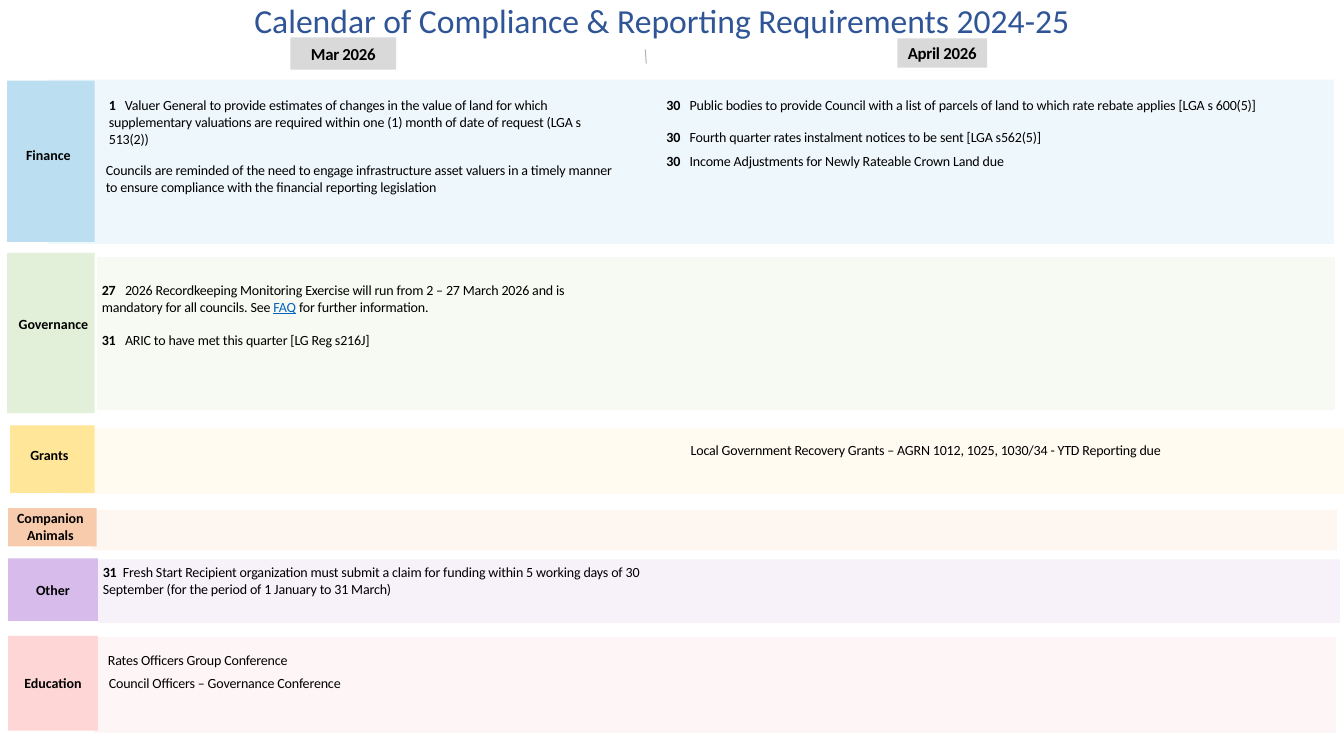
from pptx import Presentation
from pptx.dml.color import RGBColor
from pptx.enum.shapes import MSO_CONNECTOR, MSO_SHAPE
from pptx.enum.text import MSO_ANCHOR, PP_ALIGN
from pptx.oxml.ns import qn
from pptx.util import Inches, Pt
from lxml import etree

LEFT, MID = PP_ALIGN.LEFT, PP_ALIGN.CENTER
CENTRE = MSO_ANCHOR.MIDDLE
RECT = MSO_SHAPE.RECTANGLE
LINE = MSO_CONNECTOR.STRAIGHT

BASE = {"name": "Calibri", "size": Pt(10), "bold": False}
STYLES = {
    "title": {"size": Pt(24), "hex": "2F5597"},
    "month": {"size": Pt(12), "bold": True, "spc": -20},
    "label": {"bold": True},
    "day": {"bold": True, "spc": -10},
    "note": {"spc": -10},
    "link": {"underline": True, "hex": "0563C1", "spc": -10},
}
GREY = "D9D9D9"
TITLE = "Calendar of Compliance & Reporting Requirements 2024-25"
MONTHS = [("Mar 2026", (2.88, 0.37, 1.05, 0.32)),
          ("April 2026", (8.9, 0.38, 0.89, 0.29))]


def dated(day, *parts):
    """Paragraph with a bold day, a tab, then note text or (text, style) parts."""
    runs = [p if isinstance(p, tuple) else (p, "note") for p in parts]
    return [(day + "\t", "day")] + runs


def plain(text):
    return [(text, "note")]


# Labels and notes are offset from the corner of the tag.
# A note is (box, tab stop, paragraphs).
ROWS = [
    {"name": "Finance", "tag": (0.07, 0.8, 0.87, 1.6), "hue": "BBDEF0",
     "band": (0.48, 0.79, 12.75, 1.63), "tint": "ADD8ED",
     "label": (-0.12, 0.64, 1.06, 0.2),
     "notes": [
         ((1.01, 0.16, 5.06, 0.5), 0.16, [dated(
             "1", "Valuer General to provide estimates of changes in the value of "
             "land for which supplementary valuations are required within one (1) "
             "month of date of request (LGA s 513(2))")]),
         ((0.98, 0.8, 5.06, 0.34), 0, [plain(
             "Councils are reminded of the need to engage infrastructure asset "
             "valuers in a timely manner to ensure compliance with the financial "
             "reporting legislation")]),
         ((6.54, 0.16, 6.19, 0.17), 0.23, [dated(
             "30", "Public bodies to provide Council with a list of parcels of land "
             "to which rate rebate applies [LGA s 600(5)]")]),
         ((6.54, 0.47, 5.7, 0.17), 0.23, [dated(
             "30", "Fourth quarter rates instalment notices to be sent "
             "[LGA s562(5)]")]),
         ((6.54, 0.71, 3.69, 0.17), 0.23, [dated(
             "30", "Income Adjustments for Newly Rateable Crown Land due")])]},
    {"name": "Governance", "tag": (0.07, 2.51, 0.87, 1.59), "hue": "E2F0D9",
     "band": (0.96, 2.55, 12.28, 1.52), "tint": "D3E8C6",
     "label": (-0.07, 0.6, 1.06, 0.2),
     "notes": [
         ((0.94, 0.28, 4.92, 0.67), 0.23, [
             dated("27", "2026 Recordkeeping Monitoring Exercise will run from "
                   "2 – 27 March 2026 and is mandatory for all councils. See ",
                   ("FAQ", "link"), " for further information."),
             dated("31", "ARIC to have met this quarter [LG Reg s216J]")])]},
    {"name": "Grants", "tag": (0.1, 4.22, 0.84, 0.67), "hue": "FFE699",
     "band": (0.59, 4.25, 12.75, 0.65), "tint": "FFECB7",
     "label": (-0.05, 0.2, 0.88, 0.18),
     "notes": [
         ((6.75, 0.16, 6.09, 0.17), 0, [plain(
             "Local Government Recovery Grants – AGRN 1012, 1025, 1030/34 - "
             "YTD Reporting due")])]},
    {"name": "Companion Animals", "tag": (0.08, 5.04, 0.88, 0.38), "hue": "F8CBAD",
     "band": (0.91, 5.06, 12.35, 0.4), "tint": "F9D5BD",
     "label": (-0.11, 0.04, 1.06, 0.28), "notes": []},
    {"name": "Other", "tag": (0.08, 5.54, 0.89, 0.62), "hue": "D6BBEB",
     "band": (0.97, 5.55, 12.32, 0.63), "tint": "D7BCEA",
     "notes": [
         ((0.94, 0.05, 5.86, 0.34), 0.2, [dated(
             "31", "Fresh Start Recipient organization must submit a claim for "
             "funding within 5 working days of 30 September (for the period of "
             "1 January to 31 March)")])]},
    {"name": "Education", "tag": (0.08, 6.31, 0.89, 0.94), "hue": "FED6D6",
     "band": (0.93, 6.32, 12.32, 0.95), "tint": "FED6D6",
     "notes": [
         ((0.99, 0.09, 2.82, 0.29), 0, [plain("Rates Officers Group Conference")]),
         ((1.0, 0.34, 3.26, 0.26), 0,
          [plain("Council Officers – Governance Conference")])]},
]


def paint(fmt, code):
    """Set a solid colour on a fill."""
    fmt.solid()
    fmt.fore_color.rgb = RGBColor.from_string(code)


def fade(shape, alpha):
    """Set the opacity of the shape's colour in percent."""
    clr = shape._element.spPr.find(".//" + qn("a:srgbClr"))
    etree.SubElement(clr, qn("a:alpha")).set("val", str(alpha * 1000))


def write(frame, paras, align=MID, tab=0):
    frame.word_wrap = True
    frame.vertical_anchor = CENTRE
    for side in ("left", "right", "top", "bottom"):
        setattr(frame, "margin_" + side, 0)
    for i, runs in enumerate(paras):
        para = frame.add_paragraph() if i else frame.paragraphs[0]
        para.alignment = align
        para.space_before = Pt(12 if i else 0)
        if tab:
            stops = etree.SubElement(para._p.get_or_add_pPr(), qn("a:tabLst"))
            stop = etree.SubElement(stops, qn("a:tab"))
            stop.set("pos", str(Inches(tab)))
            stop.set("algn", "l")
        for text, style in runs:
            run = para.add_run()
            run.text = text
            look = {**BASE, "hex": "000000", "spc": 0, **STYLES[style]}
            paint(run.font.fill, look.pop("hex"))
            run._r.get_or_add_rPr().set("spc", str(look.pop("spc")))
            for key, val in look.items():
                setattr(run.font, key, val)


def block(slide, box, code, alpha=100):
    shape = slide.shapes.add_shape(RECT, *map(Inches, box))
    shape.shadow.inherit = False
    shape.line.fill.background()
    paint(shape.fill, code)
    if alpha < 100:
        fade(shape, alpha)
    return shape


def label(slide, box, paras, align=MID, tab=0):
    text = slide.shapes.add_textbox(*map(Inches, box))
    write(text.text_frame, paras, align, tab)


def head(slide):
    title = slide.shapes.title
    spots = map(Inches, (2.28, -0.05, 8.57, 0.5))
    for key, val in zip(("left", "top", "width", "height"), spots):
        setattr(title, key, val)
    write(title.text_frame, [[(TITLE, "title")]])
    for name, box in MONTHS:
        frame = block(slide, box, GREY).text_frame
        write(frame, [[(name, "month")]])
        frame.word_wrap = False
    rule = slide.shapes.add_connector(LINE, *map(Inches, (6.4, 0.49, 6.41, 0.63)))
    rule.line.width = Pt(0.75)
    paint(rule.line.fill, "000000")
    fade(rule, 30)
    etree.SubElement(rule._element.spPr, qn("a:effectLst"))


def band(slide, row):
    block(slide, row["band"], row["tint"], 20)
    tag = block(slide, row["tag"], row["hue"])
    left, top = row["tag"][:2]

    def shift(box):
        return left + box[0], top + box[1], box[2], box[3]

    name = [[(row["name"], "label")]]
    if "label" in row:
        label(slide, shift(row["label"]), name)
    else:
        write(tag.text_frame, name)
    for box, tab, paras in row["notes"]:
        label(slide, shift(box), paras, LEFT, tab)


def main():
    deck = Presentation()
    deck.slide_width, deck.slide_height = Inches(13.33), Inches(7.5)
    slide = deck.slides.add_slide(deck.slide_layouts[5])
    head(slide)
    for row in ROWS:
        band(slide, row)
    deck.save("out.pptx")


if __name__ == "__main__":
    main()
